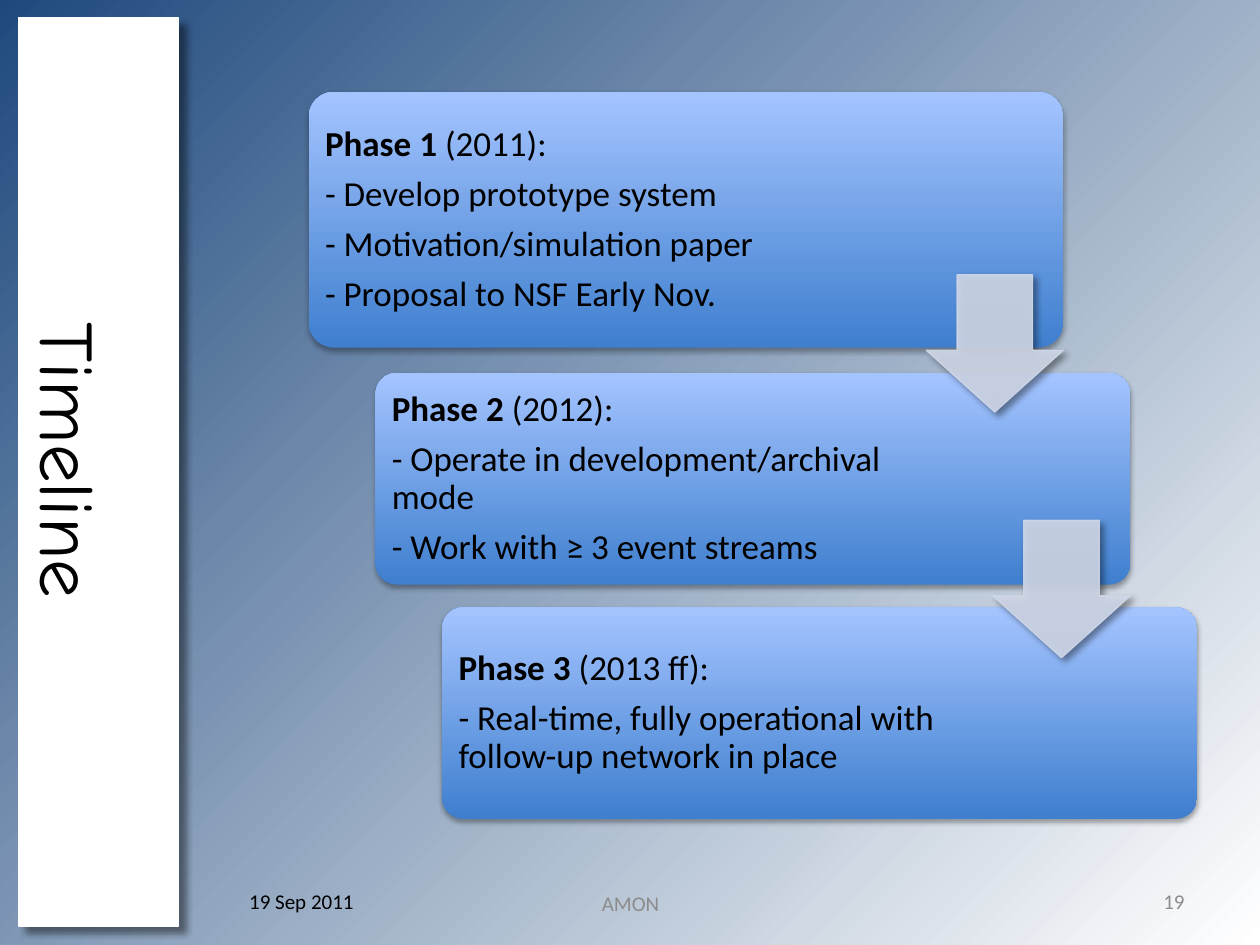
from lxml.etree import SubElement
from pptx import Presentation
from pptx.dml.color import RGBColor
from pptx.enum.shapes import MSO_SHAPE as Shape
from pptx.enum.text import MSO_ANCHOR as Anchor, PP_ALIGN as Align
from pptx.oxml.ns import qn
from pptx.util import Inches, Pt

# Content: card top, card height, text width, heading, dates, items, arrow top
PHASES = [
    (0.73, 2.03, 4.16, "Phase 1 ", "(2011):",
     ["- Develop prototype system", "- Motivation/simulation paper",
      "- Proposal to NSF Early Nov."], 2.18),
    (2.96, 1.68, 4.27, "Phase 2 ", "(2012):",
     ["- Operate in development/archival mode",
      "- Work with ≥ 3 event streams"], 4.13),
    (4.82, 1.68, 4.27, "Phase 3 ", "(2013 ff):",
     ["- Real-time, fully operational with follow-up network in place"], None),
]
FOOTERS = [
    ("19", (7.17, 6.95, 2.33, 0.4), Align.RIGHT, "8C8C8C"),
    ("19 Sep 2011", (1.88, 6.95, 1.54, 0.4), Align.LEFT, "000000"),
    ("AMON", (3.42, 6.97, 3.17, 0.4), Align.CENTER, "8C8C8C"),
]
CARD_LEFT, CARD_STEP, CARD_WIDTH = 2.45, 0.53, 5.99
ARROW_SIZE, TEXT_OFFSET, TEXT_INSET = 1.09, 0.05, 0.08


def color(value):
    return RGBColor.from_string(value)


def fill_gradient(fill, start, end):
    fill.gradient()
    for stop, value in zip(fill.gradient_stops, (start, end)):
        stop.color.rgb = color(value)


def add_alpha(parent, percent):
    SubElement(parent, qn("a:alpha")).set("val", str(percent * 1000))


def add_shadow(shape, opacity, blur, distance, angle):
    shape.shadow.inherit = False
    effects = shape.element.spPr.find(qn("a:effectLst"))
    shadow = SubElement(effects, qn("a:outerShdw"))
    for name, value in (("blurRad", Pt(blur)), ("dist", Pt(distance)),
                        ("dir", angle * 60000), ("rotWithShape", 0)):
        shadow.set(name, str(value))
    black = SubElement(shadow, qn("a:srgbClr"))
    black.set("val", "000000")
    add_alpha(black, opacity)


def add_shape(kind, box, adjustments=()):
    shape = slide.shapes.add_shape(kind, *map(Inches, box))
    for index, value in enumerate(adjustments):
        shape.adjustments[index] = value
    return shape


def add_text(box, lines, anchor=Anchor.MIDDLE):
    frame = slide.shapes.add_textbox(*map(Inches, box)).text_frame
    frame.word_wrap = True
    frame.vertical_anchor = anchor
    frame.text = "\n".join(lines)
    return frame


def set_font(font, size, value, name="Calibri"):
    font.size, font.name, font.color.rgb = Pt(size), name, color(value)


presentation = Presentation()
presentation.slide_width, presentation.slide_height = Inches(10), Inches(7.5)
slide = presentation.slides.add_slide(presentation.slide_layouts[6])

# Background: circular gradient from the top left corner
fill_gradient(slide.background.fill, "1F497D", "FFFFFF")
linear = next(slide.element.iter(qn("a:lin")))
gradient = linear.getparent()
gradient.remove(linear)
circle = SubElement(gradient, qn("a:path"))
circle.set("path", "circle")
focus = SubElement(circle, qn("a:fillToRect"))
focus.set("r", "100000")
focus.set("b", "100000")

# Title band with vertical title
band = add_shape(Shape.RECTANGLE, (0.15, 0.14, 1.27, 7.21))
band.fill.solid()
band.fill.fore_color.rgb = color("FFFFFF")
band.line.color.rgb = color("FFFFFF")
band.line.width = Pt(0.75)
add_shadow(band, 43, 4, 5, 45)

title = add_text((0.15, 0.9, 1.27, 5.51), ["Timeline"], Anchor.BOTTOM)
title.paragraphs[0].alignment = Align.CENTER
set_font(title.paragraphs[0].runs[0].font, 44, "000000", "Comic Neue")
title._txBody.bodyPr.set("vert", "vert")

# Phase cards, each a step to the right
for index, (top, height, text_width, heading, dates, items, _) in enumerate(PHASES):
    left = CARD_LEFT + index * CARD_STEP
    card = add_shape(Shape.ROUNDED_RECTANGLE, (left, top, CARD_WIDTH, height), [0.1])
    fill_gradient(card.fill, "3F7FCE", "A4C4FF")
    card.fill.gradient_angle = 90
    card.line.fill.background()
    add_shadow(card, 35, 3.1, 1.8, 90)

    frame = add_text((left + TEXT_OFFSET, top + TEXT_OFFSET, text_width,
                      height - 2 * TEXT_OFFSET), [heading] + items)
    frame.margin_left = frame.margin_right = Inches(TEXT_INSET)
    frame.margin_top = frame.margin_bottom = Inches(TEXT_INSET)
    frame.paragraphs[0].add_run().text = dates
    frame.paragraphs[0].runs[0].font.bold = True
    for paragraph in frame.paragraphs:
        paragraph.line_spacing = 0.9
        paragraph.space_after = Pt(7)
        for run in paragraph.runs:
            set_font(run.font, 20, "000000")

# Arrows, flush with the right edge of the card they leave
for index, (*_, arrow_top) in enumerate(PHASES[:-1]):
    right = CARD_LEFT + index * CARD_STEP + CARD_WIDTH
    arrow = add_shape(Shape.DOWN_ARROW, (right - ARROW_SIZE, arrow_top,
                                         ARROW_SIZE, ARROW_SIZE), [0.55, 0.45])
    arrow.fill.solid()
    arrow.fill.fore_color.rgb = color("D0D8E8")
    arrow.line.color.rgb = color("D0D8E8")
    arrow.line.width = Pt(0.75)
    for paint in arrow.element.spPr.iter(qn("a:srgbClr")):
        add_alpha(paint, 90)
    add_shadow(arrow, 43, 4, 3, 45)

# Footer
for text, box, alignment, value in FOOTERS:
    paragraph = add_text(box, [text]).paragraphs[0]
    paragraph.alignment = alignment
    set_font(paragraph.runs[0].font, 12, value)

presentation.save("out.pptx")
